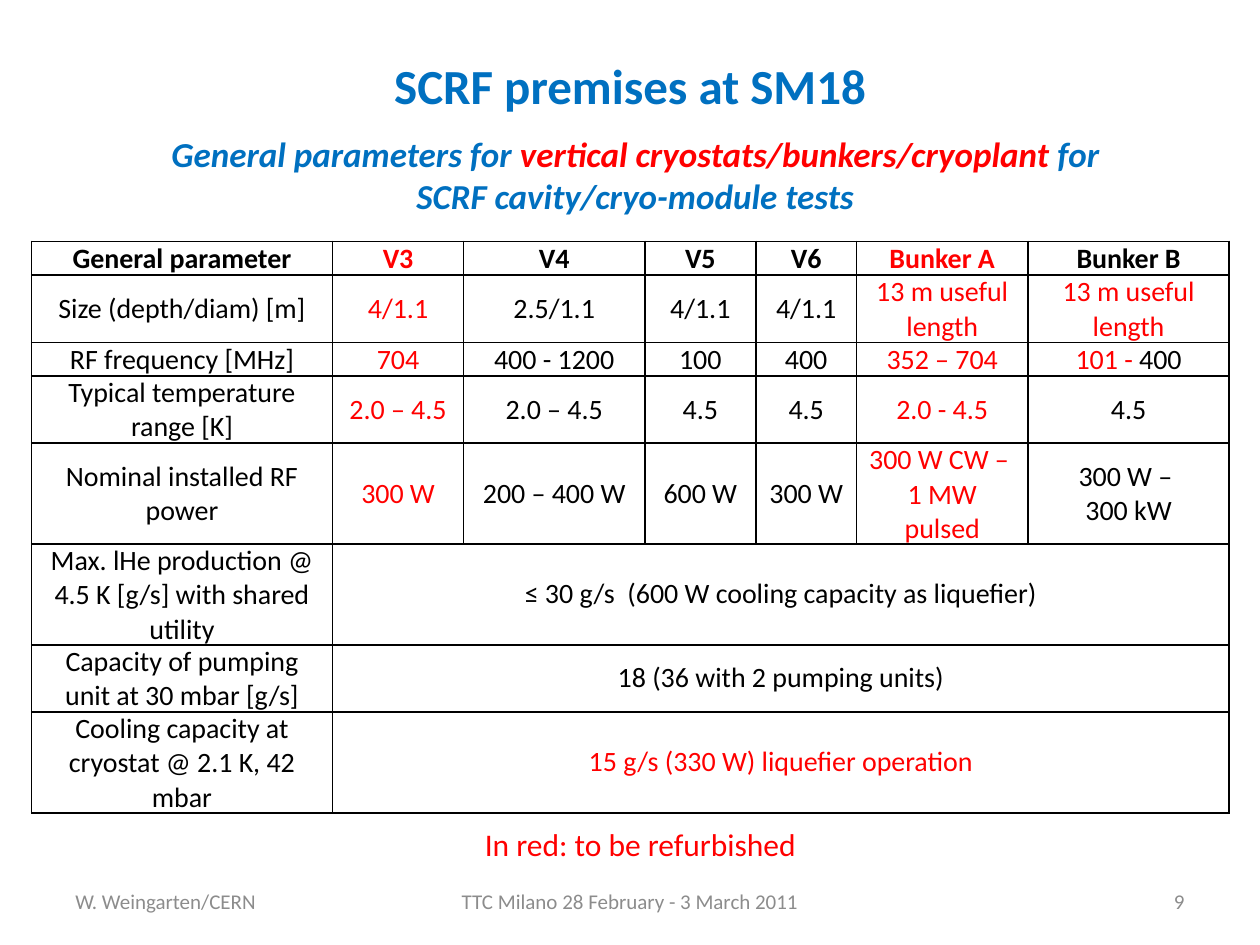
"""Builds the slide on the SCRF test premises at SM18."""
import pptx
import pptx.dml.color
import pptx.enum.text
import pptx.oxml
import pptx.oxml.ns
import pptx.util
from pptx.util import Pt

RGB = pptx.dml.color.RGBColor
BLUE = RGB(0x00, 0x70, 0xC0)
RED = RGB(0xFF, 0x00, 0x00)
BLACK = RGB(0x00, 0x00, 0x00)
GRAY = RGB(0x8C, 0x8C, 0x8C)
ALIGN = pptx.enum.text.PP_ALIGN
ANCHOR = pptx.enum.text.MSO_ANCHOR
FONT = "Calibri"


def red(text):
    return [(text, RED)]


TITLE = [("SCRF premises at SM18", BLUE)]
SUBTITLE = [
    ("General parameters for ", BLUE),
    ("vertical cryostats/bunkers/cryoplant ", RED),
    ("for SCRF cavity/cryo-module tests", BLUE),
]
LEGEND = red("In red: to be refurbished")
FOOTERS = [
    ("W. Weingarten/CERN", 36, 168, ALIGN.LEFT),
    ("TTC Milano 28 February - 3 March 2011", 246, 228, ALIGN.CENTER),
    ("9", 516, 168, ALIGN.RIGHT),
]
COLUMN_WIDTHS = [172, 75, 103.5, 63.5, 57.5, 98, 115]
ROW_HEIGHT = 16
PARAMETERS = [
    ["General parameter", red("V3"), "V4", "V5", "V6", red("Bunker A"), "Bunker B"],
    ["Size (depth/diam) [m]", red("4/1.1"), "2.5/1.1", "4/1.1", "4/1.1",
     red("13 m useful length"), red("13 m useful length")],
    ["RF frequency [MHz]", red("704"), "400 - 1200", "100", "400",
     red("352 – 704"), [("101 -", RED), (" 400", BLACK)]],
    ["Typical temperature range [K]", red("2.0 – 4.5"), "2.0 – 4.5", "4.5", "4.5",
     red("2.0 - 4.5"), "4.5"],
    ["Nominal installed RF power", red("300 W"), "200 – 400 W", "600 W", "300 W",
     red("300 W CW – \n1 MW\npulsed"), "300 W – \n300 kW"],
    ["Max. lHe production @ 4.5 K [g/s] with shared utility",
     "≤ 30 g/s  (600 W cooling capacity as liquefier)"],
    ["Capacity of pumping unit at 30 mbar [g/s]", "18 (36 with 2 pumping units)"],
    ["Cooling capacity at cryostat @ 2.1 K, 42 mbar",
     red("15 g/s (330 W) liquefier operation")],
]


def write(frame, parts, size, align, bold=False, italic=False):
    paragraph = frame.paragraphs[0]
    paragraph.alignment = align
    for text, colour in parts:
        for number, line in enumerate(text.split("\n")):
            if number:
                paragraph = frame.add_paragraph()
                paragraph.alignment = align
            run = paragraph.add_run()
            run.text = line
            run.font.name = FONT
            run.font.size = Pt(size)
            run.font.bold = bold
            run.font.italic = italic
            run.font.color.rgb = colour


def add_text(slide, box, parts, size, align, anchor=ANCHOR.TOP, wrap=True, **style):
    frame = slide.shapes.add_textbox(*map(Pt, box)).text_frame
    frame.word_wrap = wrap
    frame.vertical_anchor = anchor
    write(frame, parts, size, align, **style)


def outline(cell):
    properties = cell._tc.get_or_add_tcPr()
    for position, side in enumerate(("lnL", "lnR", "lnT", "lnB")):
        properties.insert(position, pptx.oxml.parse_xml(
            f'<a:{side} {pptx.oxml.ns.nsdecls("a")} w="{Pt(1)}"><a:solidFill>'
            f'<a:srgbClr val="{BLACK}"/></a:solidFill></a:{side}>'))


def add_parameters(slide):
    table = slide.shapes.add_table(
        len(PARAMETERS), len(COLUMN_WIDTHS), Pt(18), Pt(138),
        Pt(sum(COLUMN_WIDTHS)), Pt(ROW_HEIGHT * len(PARAMETERS))).table
    table.first_row = table.horz_banding = False
    for column, width in zip(table.columns, COLUMN_WIDTHS):
        column.width = Pt(width)
    for r, values in enumerate(PARAMETERS):
        table.rows[r].height = Pt(ROW_HEIGHT)
        for c in range(len(COLUMN_WIDTHS)):
            cell = table.cell(r, c)
            cell.fill.background()
            outline(cell)
            cell.vertical_anchor = ANCHOR.MIDDLE
            cell.margin_left = cell.margin_right = Pt(5)
            cell.margin_top = cell.margin_bottom = 0
            if c < len(values):
                parts = [(values[c], BLACK)] if isinstance(values[c], str) else values[c]
                write(cell.text_frame, parts, 16, ALIGN.CENTER, bold=r == 0)
        if len(values) == 2:
            table.cell(r, 1).merge(table.cell(r, len(COLUMN_WIDTHS) - 1))


def main():
    deck = pptx.Presentation()
    deck.slide_width, deck.slide_height = Pt(720), Pt(540)
    slide = deck.slides.add_slide(deck.slide_layouts[6])
    add_text(slide, (36, 12.5, 648, 72), TITLE, 28, ALIGN.CENTER, ANCHOR.MIDDLE, bold=True)
    for text, left, width, align in FOOTERS:
        add_text(slide, (left, 500.5, width, 28.75), [(text, GRAY)], 12, align, ANCHOR.MIDDLE)
    add_parameters(slide)
    add_text(slide, (90, 72, 546, 55.5), SUBTITLE, 20, ALIGN.CENTER, bold=True, italic=True)
    add_text(slide, (270, 468, 194.5, 29), LEGEND, 18, ALIGN.LEFT, wrap=False)
    deck.save("out.pptx")


if __name__ == "__main__":
    main()
